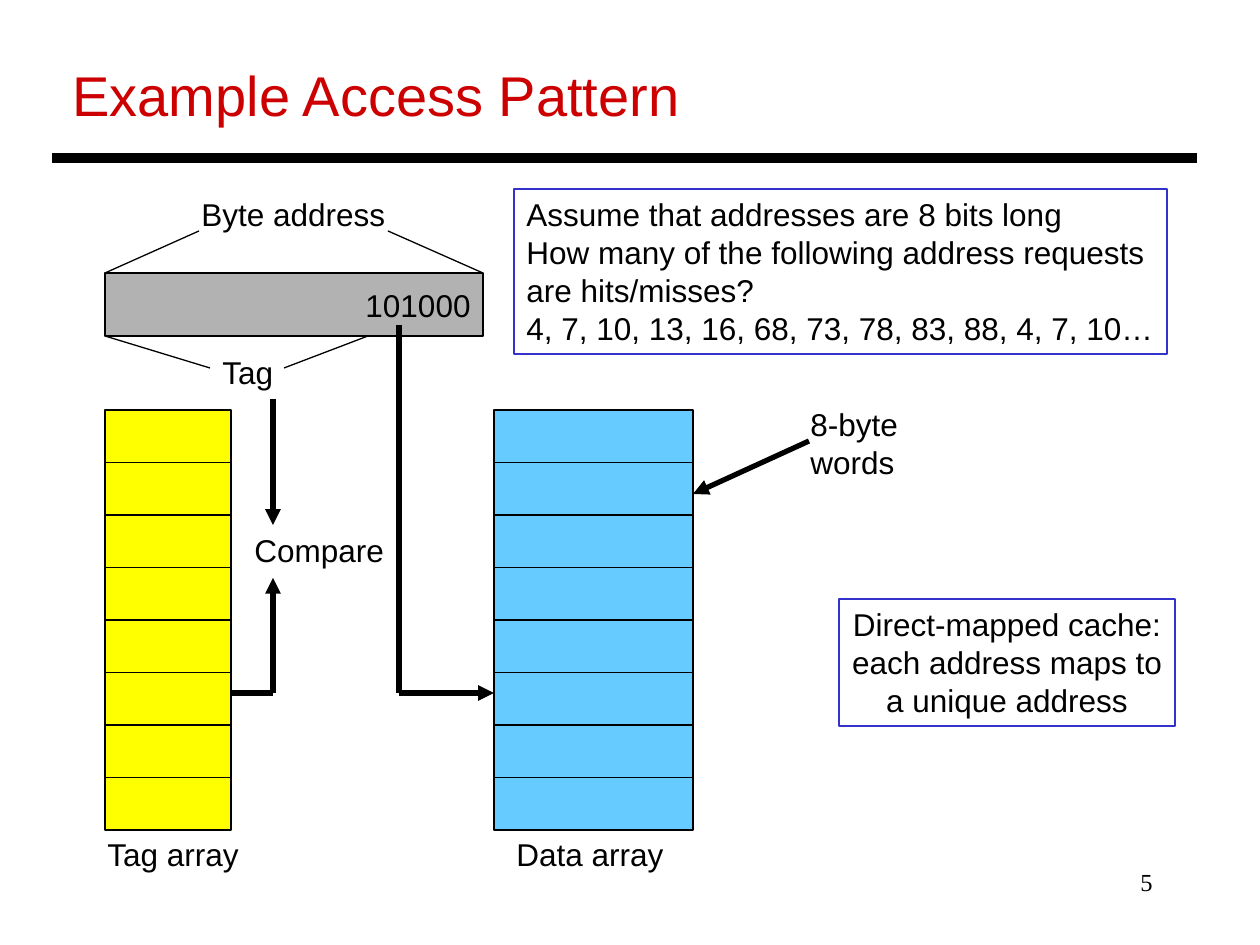
import pptx
import pptx.util
import pptx.dml.color
import pptx.enum.shapes
import pptx.enum.text
import pptx.oxml

PX_PER_INCH = 126
BLACK, RED, BLUE = "000000", "CC0000", "3333CC"
GRAY, YELLOW, SKY = "B2B2B2", "FFFF00", "66CCFF"
ALIGN = pptx.enum.text.PP_ALIGN
ANCHOR = pptx.enum.text.MSO_ANCHOR

TITLE = ("Example Access Pattern", (60, 54, 635, 79))
PAGE_NUMBER = ("5", (903, 861, 262, 63))

LABELS = [
    ("8-byte words", (798, 399, 205, 50)),
    ("Byte address", (189, 189, 209, 50)),
    ("Tag", (210, 347, 79, 50)),
    ("Compare", (242, 525, 155, 50)),
    ("Data array", (504, 829, 173, 50)),
    ("Tag array", (95, 829, 160, 50)),
]

ADDRESS = ("101000", (105, 273, 378, 63))

NOTES = [
    (["Direct-mapped cache:", "each address maps to", "a unique address"],
     (839, 599, 336, 127), ALIGN.CENTER),
    (["Assume that addresses are 8 bits long",
      "How many of the following address requests",
      "are hits/misses?",
      "4, 7, 10, 13, 16, 68, 73, 78, 83, 88, 4, 7, 10…"],
     (514, 189, 653, 165), ALIGN.LEFT),
]

ROWS, ARRAY_TOP, ARRAY_HEIGHT = 8, 410, 420
ARRAYS = [(494, 199, SKY), (105, 126, YELLOW)]  # left, width, colour

# start, end, width in points, arrowhead at the end
TITLE_RULE = ((52, 158), (1197, 158), 6, False)
GUIDES = [
    ((199, 231), (105, 273), 0.75, False),
    ((388, 231), (483, 273), 0.75, False),
    ((284, 368), (368, 336), 0.75, False),
    ((105, 336), (210, 368), 0.75, False),
]
FLOWS = [
    ((809, 441), (693, 494), 3, True),    # label to data word
    ((399, 325), (399, 693), 3, False),   # index bits down
    ((399, 693), (494, 693), 3, True),    # into the data array
    ((231, 693), (273, 693), 3, False),   # out of the tag array
    ((273, 399), (273, 525), 3, True),    # tag to compare
    ((273, 693), (273, 578), 3, True),    # stored tag to compare
]


def px(length):
    return round(length * 914400 / PX_PER_INCH)


def rgb(colour):
    return pptx.dml.color.RGBColor.from_string(colour)


def write(shape, lines, size=18, colour=BLACK, font="Arial",
          align=ALIGN.LEFT, anchor=ANCHOR.TOP):
    frame = shape.text_frame
    frame.word_wrap = False
    frame.vertical_anchor = anchor
    for number, line in enumerate(lines):
        paragraph = frame.add_paragraph() if number else frame.paragraphs[0]
        paragraph.alignment = align
        run = paragraph.add_run()
        run.text = line
        run.font.size = pptx.util.Pt(size)
        run.font.name = font
        run.font.color.rgb = rgb(colour)


def add_label(slide, text, box, **style):
    write(slide.shapes.add_textbox(*map(px, box)), [text], **style)


def add_box(slide, box, fill=None, outline=BLACK):
    shape = slide.shapes.add_shape(
        pptx.enum.shapes.MSO_SHAPE.RECTANGLE, *map(px, box))
    shape.shadow.inherit = False
    if fill:
        shape.fill.solid()
        shape.fill.fore_color.rgb = rgb(fill)
    else:
        shape.fill.background()
    shape.line.color.rgb = rgb(outline)
    shape.line.width = pptx.util.Pt(0.75)
    return shape


def add_line(slide, start, end, width, arrow):
    line = slide.shapes.add_connector(
        pptx.enum.shapes.MSO_CONNECTOR.STRAIGHT, *map(px, start + end))
    line.line.color.rgb = rgb(BLACK)
    line.line.width = pptx.util.Pt(width)
    namespace = pptx.oxml.ns.nsdecls("a")
    if arrow:
        line.line._get_or_add_ln().append(
            pptx.oxml.parse_xml(f'<a:tailEnd {namespace} type="triangle"/>'))
    line._element.spPr.append(
        pptx.oxml.parse_xml(f"<a:effectLst {namespace}/>"))


def main():
    deck = pptx.Presentation()
    deck.slide_width, deck.slide_height = px(1260), px(945)
    slide = deck.slides.add_slide(deck.slide_layouts[6])

    add_label(slide, *PAGE_NUMBER, size=14, font="Times New Roman",
              align=ALIGN.RIGHT)
    add_label(slide, *TITLE, size=32, colour=RED)
    add_line(slide, *TITLE_RULE)

    row_height = ARRAY_HEIGHT / ROWS
    for left, width, colour in ARRAYS:
        for row in range(ROWS):
            add_box(slide, (left, ARRAY_TOP + row * row_height,
                            width, row_height), colour)

    bits, box = ADDRESS
    write(add_box(slide, box, GRAY), [bits],
          align=ALIGN.RIGHT, anchor=ANCHOR.MIDDLE)

    for line in GUIDES + FLOWS:
        add_line(slide, *line)
    for text, box in LABELS:
        add_label(slide, text, box)
    for lines, box, align in NOTES:
        write(add_box(slide, box, outline=BLUE), lines, align=align)

    deck.save("out.pptx")


if __name__ == "__main__":
    main()
